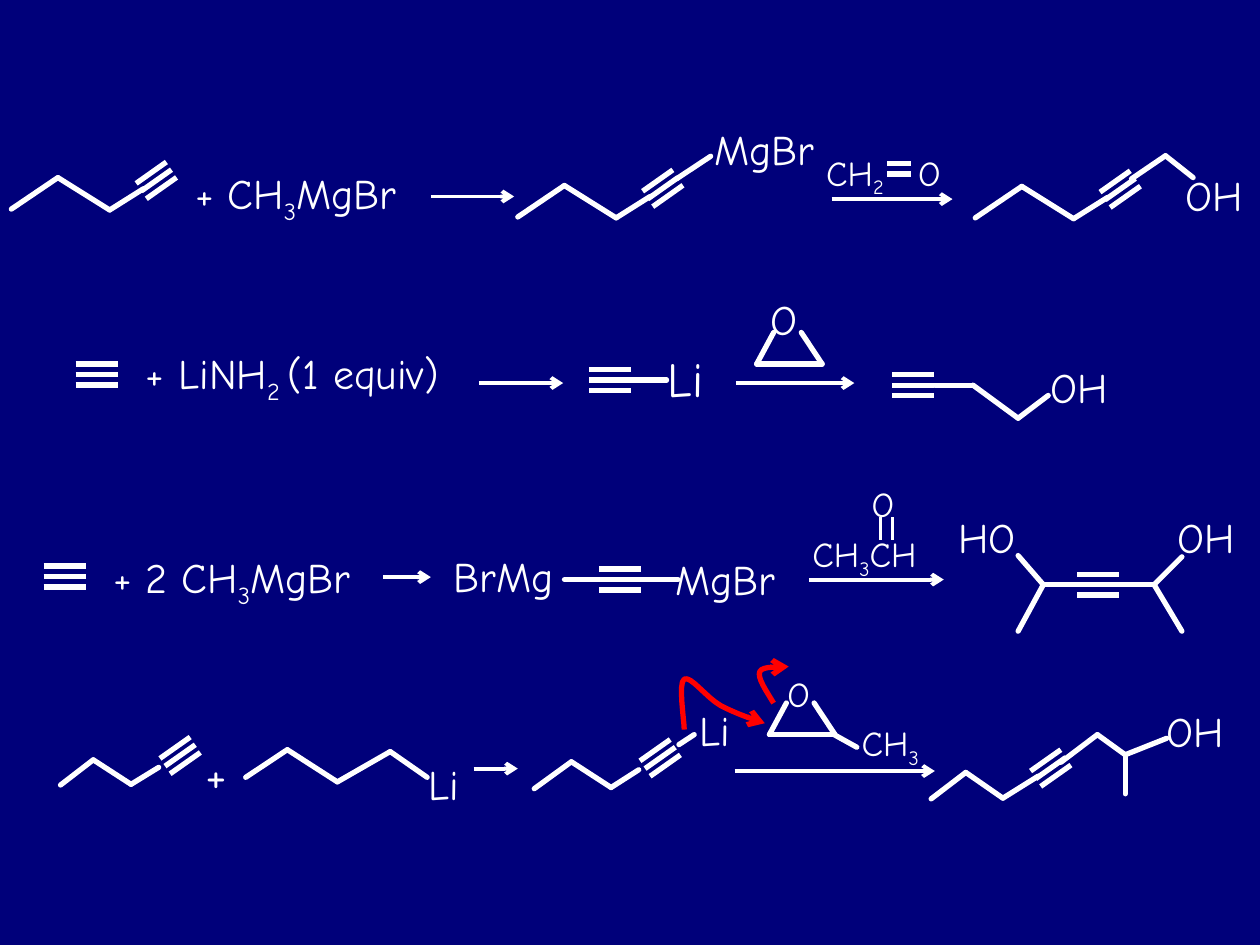
"""Builds a slide of four alkyne alkylation schemes."""
from lxml import etree
from pptx import Presentation
from pptx import util as u
from pptx.dml.color import RGBColor
from pptx.enum import shapes, text
from pptx.oxml.ns import qn

WHITE, RED, NAVY = "FFFFFF", "FF0000", "00007A"


def rgb(h):
    return RGBColor.from_string(h)


class Scheme:
    def __init__(self, slide, font="Comic Neue", color=WHITE, bond=3):
        self.s, self.font, self.color, self.bond = slide, font, color, bond

    def style_line(self, sp, color, width, cap="flat", arrow=False):
        sp.line.color.rgb = rgb(color)
        sp.line.width = u.Pt(width)
        ln = sp.line._get_or_add_ln()
        ln.set("cap", cap)
        if arrow:
            etree.SubElement(ln, qn("a:tailEnd"), type="arrow")

    def line(self, a, b, width=None, **style):
        sp = self.s.shapes.add_connector(
            shapes.MSO_CONNECTOR.STRAIGHT, *(u.Pt(v) for v in (*a, *b)))
        self.style_line(sp, self.color, width or self.bond, **style)
        etree.SubElement(sp._element.spPr, qn("a:effectLst"))

    def arrow(self, x1, x2, y):
        self.line((x1, y), (x2, y), 2.25, arrow=True)

    def chain(self, *pts):
        for a, b in zip(pts, pts[1:]):
            self.line(a, b, cap="rnd")

    def triple(self, x, y, run, gap):
        for k in (-1, 0, 1):
            x1, y1 = x + k * gap[0], y + k * gap[1]
            self.line((x1, y1), (x1 + run[0], y1 + run[1]))

    def flat_triple(self, x, y):
        self.triple(x, y, (24.1, 0), (0, 6))

    def slant_triple(self, x, y):
        self.triple(x, y, (17.3, -12.2), (2.9, 4.4))

    def pentynyl(self, x, y):
        steps = (0, 0), (26.6, -18), (56.2, 0.5), (75.6, -11.7)
        self.chain(*((x + dx, y + dy) for dx, dy in steps))
        self.slant_triple(x + 74.2, y - 10.3)

    def epoxide(self, x, y):
        self.chain((x + 9.7, y - 18), (x, y), (x + 37.4, y), (x + 25.5, y - 18))

    def curve(self, start, *beziers):
        pts = [start]
        for c1, c2, end in beziers:
            p0 = pts[-1]
            for t in (i / 8 for i in range(1, 9)):
                w = (1 - t) ** 3, 3 * t * (1 - t) ** 2, 3 * t * t * (1 - t), t ** 3
                pts.append(tuple(sum(k * p[i] for k, p in zip(w, (p0, c1, c2, end)))
                                 for i in (0, 1)))
        pts = [(u.Pt(x), u.Pt(y)) for x, y in pts]
        fb = self.s.shapes.build_freeform(*pts[0], scale=1.0)
        fb.add_line_segments(pts[1:], close=False)
        sp = fb.convert_to_shape()
        sp.shadow.inherit = False
        sp.fill.background()
        self.style_line(sp, RED, self.bond, arrow=True)

    def label(self, x, y, w, content, size=24):
        sp = self.s.shapes.add_textbox(
            *(u.Pt(v) for v in (x, y, w, size * 1.2 + 7.2)))
        tf = sp.text_frame
        tf.word_wrap = True
        tf.auto_size = text.MSO_AUTO_SIZE.SHAPE_TO_FIT_TEXT
        p = tf.paragraphs[0]
        p.font.name, p.font.size = self.font, u.Pt(size)
        p.font.color.rgb = rgb(self.color)
        for i, part in enumerate(content.split("_")):
            r = p.add_run()
            r.text = part
            if i % 2:
                r._r.get_or_add_rPr().set("baseline", "-25000")


LABELS = [
    (104.4, 92.2, 158, "+ CH_3_MgBr"), (401, 67, 87, "MgBr"),
    (465, 82.8, 60, "CH_2", 20), (517.5, 82.8, 32, "O", 20),
    (670.3, 93.6, 61, "OH"),
    (76.3, 195.2, 241, "+ LiNH_2 _(1 equiv)"), (374.4, 195.8, 42, "Li", 28),
    (433.4, 164.2, 32, "O"), (593.3, 203, 61, "OH"),
    (57.6, 311.8, 186, "+ 2 CH_3_MgBr"), (252, 311, 86, "BrMg"),
    (378.7, 312.5, 86, "MgBr"), (457.2, 301, 86, "CH_3_CH", 20),
    (491, 272.2, 32, "O", 20), (540.7, 288.7, 61, "HO"), (666, 288.7, 61, "OH"),
    (110.2, 421.2, 50, "+", 28), (237.6, 429.8, 35, "Li"),
    (392.4, 398.9, 87, "Li"), (442.8, 380.9, 32, "O", 20),
    (485.3, 409, 63, "CH_3", 20), (659.5, 399.6, 61, "OH"),
]
ARROWS = [
    (246.2, 293.8, 112.3), (475.2, 544.3, 113.8),
    (273.6, 321.8, 218.9), (420.5, 488.2, 218.9),
    (218.9, 246.2, 329.8), (462.2, 539.3, 331.2),
    (270.7, 295.9, 439.2), (419.8, 534.2, 440.6),
]
PENTYNYLS = [(6.5, 119.5), (295.9, 124), (557.3, 124.5)]
SLANT_TRIPLES = [(94.3, 437.8), (368.6, 439.2), (591.8, 445)]
FLAT_TRIPLES = [(43.2, 214), (336.7, 217.2), (509.9, 220.1),
                (25, 329.5), (342.2, 331.2), (615.6, 334.1)]
EPOXIDES = [(432.4, 208), (439.7, 419.7)]
CHAINS = [
    [(386.6, 102.2), (406.1, 89.3)],
    [(646.6, 102.2), (666, 89), (681.8, 101.5)],
    [(360, 217.2), (380.9, 217.2)],
    [(534.2, 220.1), (556, 220.1), (581.8, 239), (599, 226)],
    [(322.6, 331.2), (344.2, 331.2)],
    [(365.8, 331.2), (387.4, 331.2)],
    [(581.8, 317.5), (596.2, 334.1), (616.3, 334.1)],
    [(581.8, 360.7), (596.2, 334.1)],
    [(638.6, 334.1), (659.5, 334.1), (675.4, 318.2)],
    [(675.4, 360.7), (659.5, 334.1)],
    [(34.6, 448.6), (53.3, 434.2), (74.9, 448.2), (90.7, 438.5)],
    [(140.4, 444.2), (164.2, 428.4), (192.8, 446.8), (223, 429.5), (244.1, 444.2)],
    [(305.3, 450.7), (326.5, 435.3), (349.2, 450), (365, 439.9)],
    [(388, 425.5), (396.7, 419.8)],
    [(475.9, 419.4), (489.6, 427)],
    [(532.1, 456.5), (551.9, 441.4), (573.1, 456.1), (593.3, 443.5)],
    [(606.2, 435.6), (627.1, 419.8), (643, 431.3), (666.7, 421.9)],
    [(643, 431.3), (643, 453.6)],
]


def main():
    prs = Presentation()
    prs.slide_width, prs.slide_height = u.Pt(720), u.Pt(540)
    s = prs.slides.add_slide(prs.slide_layouts[6])
    s.background.fill.solid()
    s.background.fill.fore_color.rgb = rgb(NAVY)
    scheme = Scheme(s)
    for draw, rows in (
        (scheme.pentynyl, PENTYNYLS), (scheme.slant_triple, SLANT_TRIPLES),
        (scheme.flat_triple, FLAT_TRIPLES), (scheme.epoxide, EPOXIDES),
        (scheme.chain, CHAINS), (scheme.arrow, ARROWS), (scheme.label, LABELS),
    ):
        for row in rows:
            draw(*row)
    for y in (93.6, 99.4):
        scheme.line((506.9, y), (520.6, y))
    for x in (503.3, 509.8):
        scheme.line((x, 308.5), (x, 295.6), 1.75)
    scheme.curve((391, 416.9),
                 ((391, 411.8), (387.4, 390.2), (391, 388.1)),
                 ((394.6, 385.9), (403.9, 398.9), (411.8, 403.2)),
                 ((419.8, 407.5), (432, 411.8), (437, 413.3)))
    scheme.curve((442.1, 401.8),
                 ((437.8, 394.6), (432.7, 387.4), (434.2, 383.8)),
                 ((435.6, 380.2), (447.1, 381.6), (450.7, 380.9)))
    prs.save("out.pptx")


if __name__ == "__main__":
    main()
